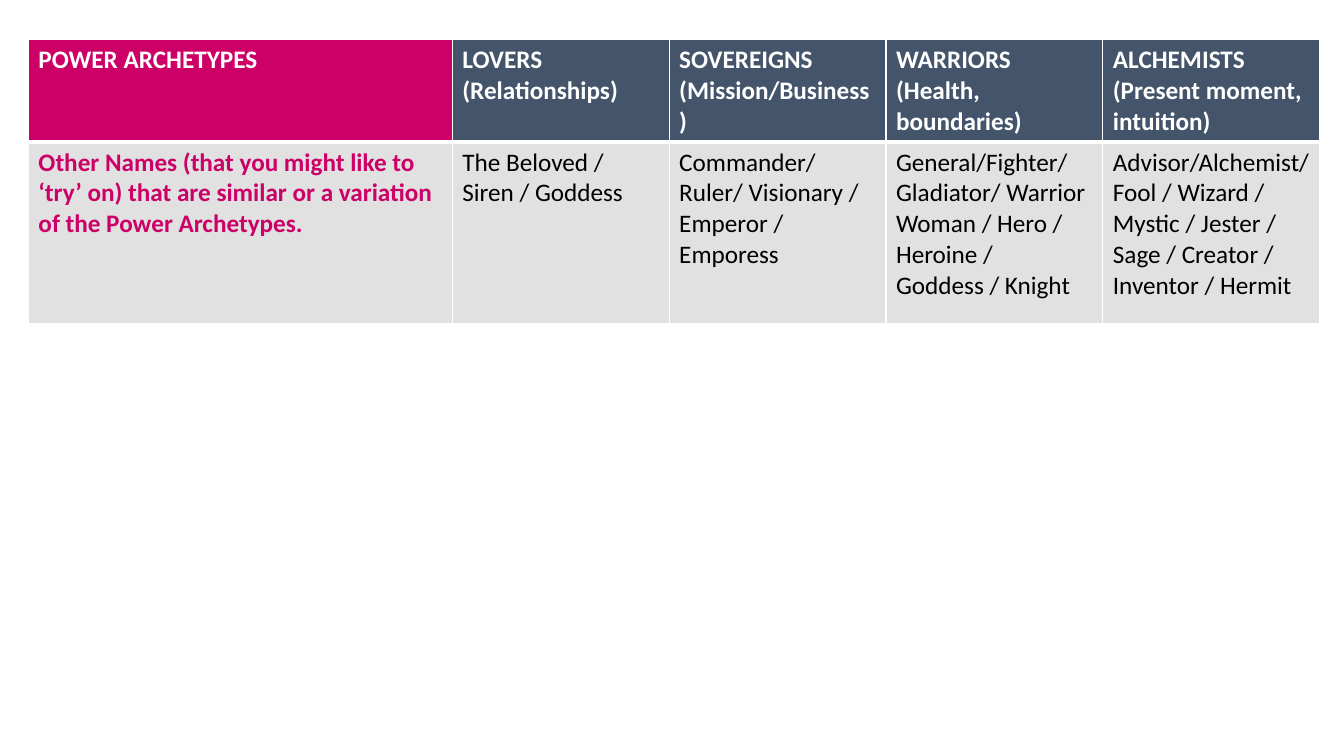
from dataclasses import dataclass

from lxml import etree
from pptx import Presentation
from pptx.dml.color import RGBColor
from pptx.oxml.ns import qn
from pptx.util import Pt

BLANK_LAYOUT = 6


@dataclass(frozen=True)
class Theme:
    font: str = "Calibri"
    text_size: int = 18
    accent: str = "CC0066"
    header: str = "44546A"
    body: str = "E1E1E1"
    light: str = "FFFFFF"
    dark: str = "000000"
    thin_border: int = 1
    thick_border: int = 3


THEME = Theme()

LABELS = ["POWER ARCHETYPES",
          "Other Names (that you might like to ‘try’ on) that are similar "
          "or a variation of the Power Archetypes."]
ARCHETYPES = [
    ("LOVERS (Relationships)", "The Beloved / Siren / Goddess"),
    ("SOVEREIGNS (Mission/Business)",
     "Commander/Ruler/ Visionary / Emperor / Emporess"),
    ("WARRIORS (Health, boundaries)",
     "General/Fighter/\nGladiator/ Warrior Woman / Hero / Heroine / Goddess / Knight"),
    ("ALCHEMISTS (Present moment, intuition)",
     "Advisor/Alchemist/ Fool / Wizard / Mystic / Jester / Sage / Creator / "
     "Inventor / Hermit"),
]


def set_borders(cell, top, bottom):
    """Draw light borders; top and bottom are widths in points."""
    properties = cell._tc.get_or_add_tcPr()
    widths = {"a:lnL": THEME.thin_border, "a:lnR": THEME.thin_border,
              "a:lnT": top, "a:lnB": bottom}
    for position, (tag, width) in enumerate(widths.items()):
        line = etree.Element(qn(tag), w=str(Pt(width)))
        fill = etree.SubElement(line, qn("a:solidFill"))
        etree.SubElement(fill, qn("a:srgbClr"), val=THEME.light)
        properties.insert(position, line)


def write_cell(cell, text, fill, color, bold):
    cell.fill.solid()
    cell.fill.fore_color.rgb = RGBColor.from_string(fill)
    frame = cell.text_frame
    for index, line in enumerate(text.split("\n")):
        paragraph = frame.add_paragraph() if index else frame.paragraphs[0]
        run = paragraph.add_run()
        run.text = line
        run.font.name = THEME.font
        run.font.size = Pt(THEME.text_size)
        run.font.bold = bold
        run.font.color.rgb = RGBColor.from_string(color)


def add_archetype_table(slide, left, top, width, label_width, row_heights):
    """Place a label column and equal archetype columns across the width."""
    rows = list(zip(LABELS, *ARCHETYPES))
    table = slide.shapes.add_table(len(rows), len(rows[0]), left, top, width,
                                   sum(row_heights)).table
    archetype_width = (width - label_width) // len(ARCHETYPES)
    for index, column in enumerate(table.columns):
        column.width = archetype_width if index else label_width
    for row, height in zip(table.rows, row_heights):
        row.height = height

    for row_index, texts in enumerate(rows):
        is_header = row_index == 0
        for column_index, text in enumerate(texts):
            is_label = column_index == 0
            if is_header:
                fill = THEME.accent if is_label else THEME.header
                color = THEME.light
            else:
                fill = THEME.body
                color = THEME.accent if is_label else THEME.dark
            cell = table.cell(row_index, column_index)
            write_cell(cell, text, fill, color, is_header or is_label)
            if is_header:
                set_borders(cell, THEME.thin_border, THEME.thick_border)
            else:
                set_borders(cell, THEME.thick_border, THEME.thin_border)


def main():
    presentation = Presentation()
    presentation.slide_width = Pt(960)
    presentation.slide_height = Pt(540)
    slide = presentation.slides.add_slide(presentation.slide_layouts[BLANK_LAYOUT])
    add_archetype_table(slide, Pt(20.3), Pt(28.3), Pt(922.4), Pt(302.8),
                        [Pt(72.5), Pt(129.5)])
    presentation.save("out.pptx")


if __name__ == "__main__":
    main()
